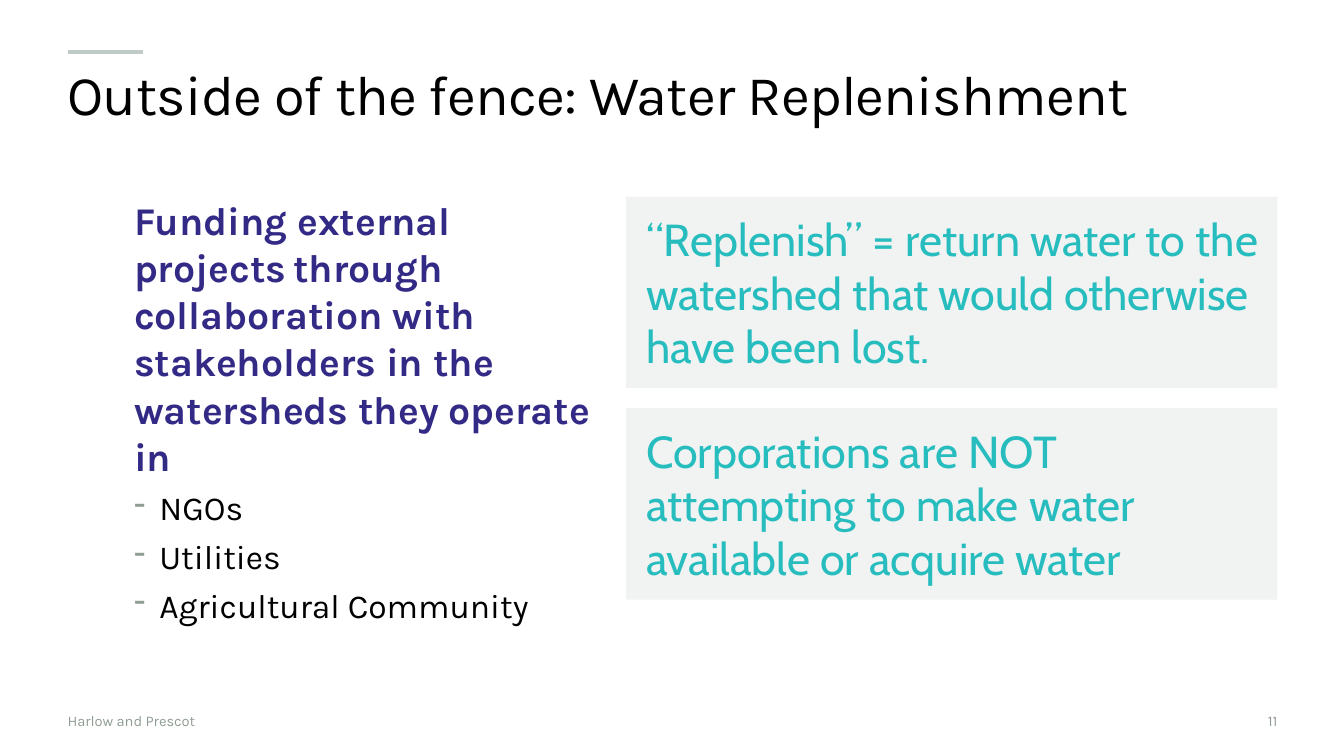
from lxml import etree
from pptx import Presentation
from pptx.dml.color import RGBColor
from pptx.enum.shapes import MSO_CONNECTOR, MSO_SHAPE
from pptx.enum.text import MSO_ANCHOR, MSO_AUTO_SIZE, PP_ALIGN
from pptx.oxml.ns import qn
from pptx.util import Inches, Pt

LEFT, RIGHT = PP_ALIGN.LEFT, PP_ALIGN.RIGHT
TOP, MIDDLE = MSO_ANCHOR.TOP, MSO_ANCHOR.MIDDLE
GREY = "909D93"


def style(paragraph, font_name, size, color, align=LEFT):
    paragraph.alignment = align
    paragraph.font.name = font_name
    paragraph.font.size = Pt(size)
    paragraph.font.color.rgb = RGBColor.from_string(color)


def set_frame(frame, anchor, left=0, other=0):
    """Wrap the text and set the left inset and the three other insets in inches."""
    frame.word_wrap = True
    frame.auto_size = MSO_AUTO_SIZE.NONE
    frame.vertical_anchor = anchor
    frame.margin_left = Inches(left)
    frame.margin_top = frame.margin_right = frame.margin_bottom = Inches(other)


prs = Presentation()
prs.slide_width, prs.slide_height = Inches(13.33), Inches(7.5)
slide = prs.slides.add_slide(prs.slide_layouts[5])
shapes = slide.shapes

# Accent line and title
accent = shapes.add_connector(
    MSO_CONNECTOR.STRAIGHT, Inches(0.67), Inches(0.52), Inches(1.42), Inches(0.52))
accent.line.color.rgb = RGBColor.from_string("C0CAC7")
accent.line.width = Pt(3)
etree.SubElement(accent._element.spPr, qn("a:effectLst"))

title = shapes.title
title.left, title.top = Inches(0.67), Inches(0.69)
title.width, title.height = Inches(12), Inches(0.57)
set_frame(title.text_frame, TOP)
heading = title.text_frame.paragraphs[0]
heading.text = "Outside of the fence: Water Replenishment"
heading.line_spacing = 0.85
style(heading, "Karla", 40, "000000")
heading.runs[0]._r.get_or_add_rPr().set("spc", "-50")

# Footer
for text, left, width, align in [
    ("Harlow and Prescot", 0.67, 7.87, LEFT),
    ("11", 9.42, 3.25, RIGHT),
]:
    footer = shapes.add_textbox(Inches(left), Inches(6.95), Inches(width), Inches(0.4))
    set_frame(footer.text_frame, MIDDLE)
    footer.text_frame.text = text
    style(footer.text_frame.paragraphs[0], "Karla", 10.5, GREY, align)

# Statement panels
statements = [
    "“Replenish” = return water to the watershed that would otherwise have been lost.",
    "Corporations are NOT attempting to make water available or acquire water",
]
for row, statement in enumerate(statements):
    panel = shapes.add_shape(MSO_SHAPE.RECTANGLE, Inches(6.21), Inches(1.95 + 2.1 * row),
                             Inches(6.46), Inches(1.9))
    panel.shadow.inherit = False
    panel.fill.solid()
    panel.fill.fore_color.rgb = RGBColor.from_string("F1F2F2")
    panel.line.fill.background()
    set_frame(panel.text_frame, MIDDLE, 0.2, 0.1)
    panel.text_frame.text = statement
    style(panel.text_frame.paragraphs[0], "Cabin", 32, "27BDBE")

# Funding approach and its partners
funding = shapes.add_textbox(Inches(1.33), Inches(1.95), Inches(4.73), Inches(4.55)).text_frame
set_frame(funding, TOP)
approach = funding.paragraphs[0]
approach.space_after = Pt(6)
style(approach, "Karla", 28, "332A86")
approach.font.bold = True
for text, size in [
    ("Funding external projects", 28),
    (" ", 20),
    ("through collaboration with stakeholders in the watersheds they operate in", 28),
]:
    run = approach.add_run()
    run.text = text
    run.font.size = Pt(size)

for partner in ["NGOs", "Utilities", "Agricultural Community"]:
    item = funding.add_paragraph()
    item.text = partner
    item.space_after = Pt(6)
    props = item._p.get_or_add_pPr()
    props.set("marL", str(Inches(0.25)))
    props.set("indent", str(Inches(-0.25)))
    bullet_color = etree.SubElement(props, qn("a:buClr"))
    etree.SubElement(bullet_color, qn("a:srgbClr"), val=GREY)
    etree.SubElement(props, qn("a:buChar"), char="-")
    style(item, "Karla", 24, "000000")

prs.save("out.pptx")
